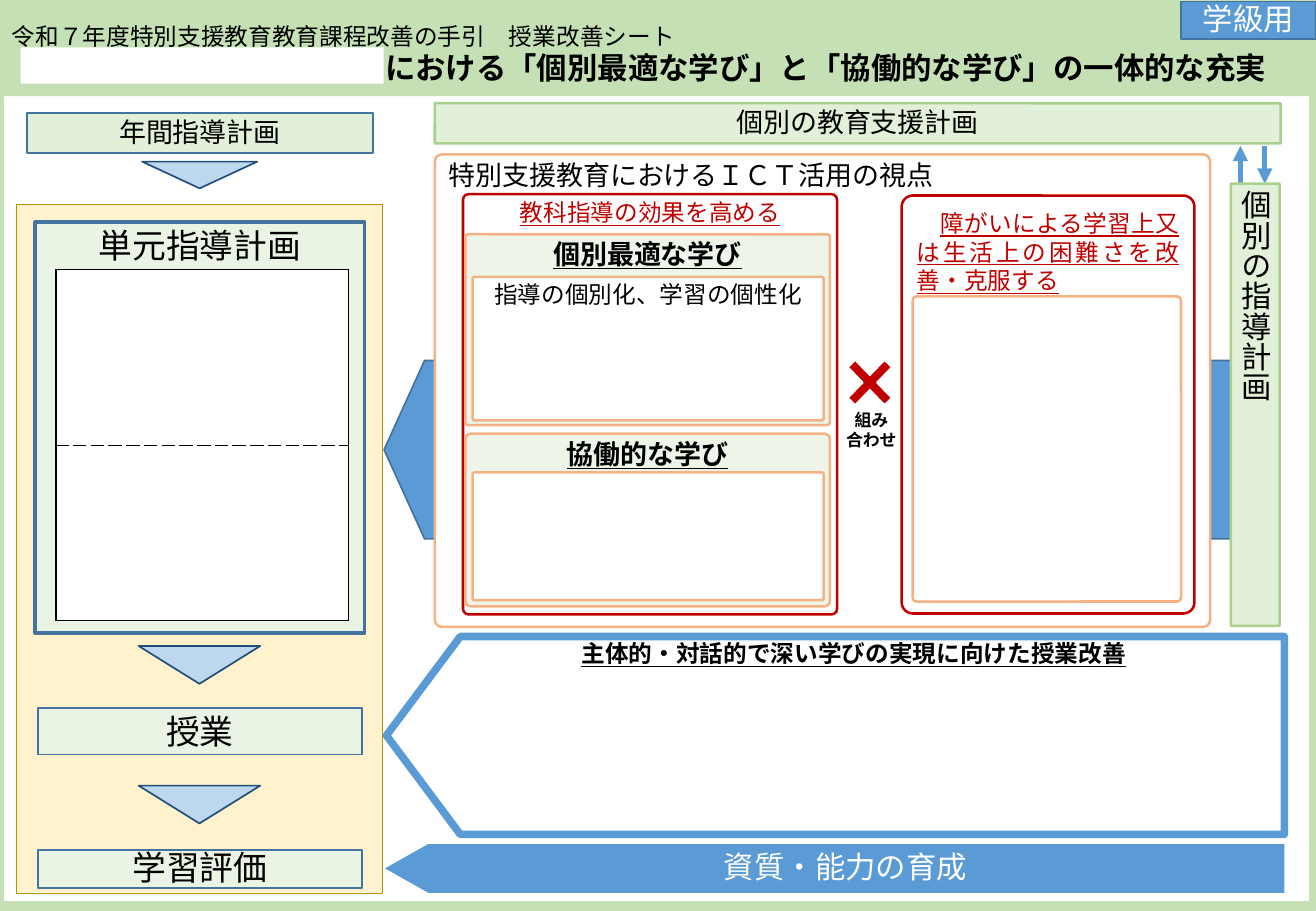
from dataclasses import dataclass
from typing import NamedTuple, Optional

from lxml import etree
from pptx import Presentation
from pptx.dml.color import RGBColor
from pptx.enum.shapes import MSO_CONNECTOR, MSO_SHAPE
from pptx.enum.text import MSO_ANCHOR, MSO_AUTO_SIZE, PP_ALIGN
from pptx.oxml.ns import qn
from pptx.util import Cm, Pt

RECT, ROUND = MSO_SHAPE.RECTANGLE, MSO_SHAPE.ROUNDED_RECTANGLE
DOWN, LEFT_ARROW = MSO_SHAPE.DOWN_ARROW, MSO_SHAPE.LEFT_ARROW
PENTAGON, TIMES = MSO_SHAPE.PENTAGON, MSO_SHAPE.MATH_MULTIPLY
STRAIGHT = MSO_CONNECTOR.STRAIGHT
TOP, MIDDLE = MSO_ANCHOR.TOP, MSO_ANCHOR.MIDDLE
LEFT, CENTER, JUSTIFY = PP_ALIGN.LEFT, PP_ALIGN.CENTER, PP_ALIGN.JUSTIFY
NO_FIT = MSO_AUTO_SIZE.NONE


@dataclass(frozen=True)
class Theme:
    font: str = "Noto Sans CJK JP"
    black: str = "000000"
    white: str = "FFFFFF"
    blue: str = "5B9BD5"
    steel: str = "43739E"
    navy: str = "1F4E79"
    sky: str = "BDD7EE"
    red: str = "C00000"
    orange: str = "F4B183"
    gold: str = "BF9000"
    cream: str = "FFF2CC"
    band: str = "C5E0B4"
    leaf: str = "A9D18E"
    pale: str = "E2F0D9"
    mint: str = "EAF4E4"
    mist: str = "ECF5E7"
    tiny: int = 10
    small: int = 14
    medium: int = 16
    large: int = 18
    huge: int = 20


T = Theme()


class Look(NamedTuple):
    fill: Optional[str]
    line: Optional[str] = None
    width: float = 1


STEP = Look(T.mint, T.steel)
MARKER = Look(T.sky, T.navy)
WHITE_CARD = Look(T.white, T.orange, 1.5)
TINTED_CARD = Look(T.mist, T.orange, 1.5)
RED_CARD = Look(T.white, T.red, 1.5)
SUPPORT_PLAN = Look(T.pale, T.leaf, 1.5)


@dataclass(frozen=True)
class Label:
    lines: tuple[str, ...]
    size: int
    color: str = T.black
    bold: bool = False
    underline: bool = False
    align: PP_ALIGN = CENTER
    anchor: MSO_ANCHOR = TOP
    top: float = 0.05
    spacing: Optional[int] = None
    first_indent: float = 0
    vertical: bool = False


@dataclass(frozen=True)
class Box:
    at: tuple[float, float, float, float]
    look: Look
    shape: MSO_SHAPE = RECT
    adj: tuple[float, ...] = ()
    label: Optional[Label] = None
    flip: bool = False


class Arrow(NamedTuple):
    x: float
    y1: float
    y2: float


def heading(text: str, size: int, **options) -> Label:
    return Label((text,), size, **options)


SOFT = (0.015,)
FULL_HEAD = (0.5, 1)

ARROWS = [Arrow(26.44, 3.05, 3.84), Arrow(25.93, 3.84, 3.05)]

BOXES = [
    Box((0.33, 4.27, 7.67, 14.4), Look(T.cream, T.gold, 0.25)),
    Box((2.9, 16.43, 2.54, 0.79), MARKER, DOWN, FULL_HEAD),
    Box((0.79, 14.81, 6.78, 0.97), STEP, label=heading("授業", T.huge)),
    Box((0.79, 17.78, 6.78, 0.79), STEP, label=heading("学習評価", T.huge, anchor=MIDDLE)),
    Box((0.74, 4.65, 6.88, 8.59), Look(T.mint, T.steel, 2.25),
        label=heading("単元指導計画", T.huge)),
    Box((2.9, 13.51, 2.54, 0.79), MARKER, DOWN, FULL_HEAD),
    Box((8.08, 13.31, 18.77, 4.14), Look(T.white, T.blue, 4.5), PENTAGON, (0.373,), flip=True,
        label=heading("主体的・対話的で深い学びの実現に向けた授業改善", T.small,
                      bold=True, underline=True)),
    Box((8.05, 17.65, 18.8, 1.02), Look(T.blue), PENTAGON, (0.887,), flip=True,
        label=heading("資質・能力の育成", T.large, color=T.white, anchor=MIDDLE)),
    Box((8.03, 7.54, 18.72, 3.73), Look(T.blue, T.steel), LEFT_ARROW, (1, 0.227)),
    Box((9.09, 3.23, 16.21, 9.88), WHITE_CARD, ROUND, SOFT,
        heading("特別支援教育におけるＩＣＴ活用の視点", T.medium, align=JUSTIFY)),
    Box((9.68, 4.06, 7.82, 8.79), RED_CARD, ROUND, SOFT,
        heading("教科指導の効果を高める", T.small, color=T.red, underline=True)),
    Box((18.85, 4.09, 6.12, 8.74), RED_CARD, ROUND, (0.038,),
        heading("障がいによる学習上又は生活上の困難さを改善・克服する", T.small, color=T.red,
                underline=True, align=JUSTIFY, top=0.2, spacing=17, first_indent=0.49)),
    Box((9.73, 4.9, 7.62, 3.99), TINTED_CARD, ROUND, SOFT,
        heading("個別最適な学び", T.medium, bold=True, underline=True)),
    Box((17.45, 7.24, 1.47, 1.52), Look(T.red, T.white), TIMES, (0.144,)),
    Box((9.88, 5.79, 7.34, 3), WHITE_CARD, ROUND, SOFT,
        heading("指導の個別化、学習の個性化", T.small)),
    Box((9.73, 9.07, 7.62, 3.61), TINTED_CARD, ROUND, (0.03,),
        heading("協働的な学び", T.medium, bold=True, underline=True)),
    Box((9.88, 9.88, 7.34, 2.67), WHITE_CARD, ROUND, SOFT),
    Box((25.73, 3.84, 1.02, 9.25), SUPPORT_PLAN, ROUND, SOFT,
        heading("個別の指導計画", T.large, align=LEFT, anchor=MIDDLE, top=0.13, vertical=True)),
    Box((2.97, 3.38, 2.41, 0.56), MARKER, DOWN, FULL_HEAD),
    Box((0.56, 2.36, 7.24, 0.84), Look(T.pale, T.steel), label=heading("年間指導計画", T.medium)),
    Box((-0.03, 0.05, 27.51, 18.9), Look(None, T.band, 6)),
    Box((19.08, 6.2, 5.61, 6.38), WHITE_CARD, ROUND, SOFT),
    Box((0.43, 0.99, 7.59, 0.76), Look(T.white)),
    Box((24.69, 0.03, 2.82, 0.79), Look(T.blue, T.steel),
        label=heading("学級用", T.large, color=T.white, anchor=MIDDLE)),
    Box((9.09, 2.16, 17.68, 0.84), SUPPORT_PLAN, ROUND, SOFT,
        heading("個別の教育支援計画", T.medium, anchor=MIDDLE)),
]
COMBINE_AT = (17.35, 8.43, 1.73, 1.12)
COMBINE = Label(("組み", "合わせ"), T.tiny, bold=True, top=0.13, spacing=12)


def lengths(values: tuple[float, ...]) -> list[Cm]:
    return [Cm(v) for v in values]


def set_frame(tf, anchor: MSO_ANCHOR, top: float, bottom: float = 0.13) -> None:
    values = dict(word_wrap=True, auto_size=NO_FIT, vertical_anchor=anchor, margin_left=Cm(0.25),
                  margin_right=Cm(0.25), margin_top=Cm(top), margin_bottom=Cm(bottom))
    for name, value in values.items():
        setattr(tf, name, value)


def write_line(p, text: str, label: Label) -> None:
    p.alignment = label.align
    if label.spacing:
        p.line_spacing = Pt(label.spacing)
    if label.first_indent:
        p._p.get_or_add_pPr().set("indent", str(Cm(label.first_indent)))
    r = p.add_run()
    r.text = text
    values = dict(name=T.font, size=Pt(label.size), bold=label.bold, underline=label.underline)
    for name, value in values.items():
        setattr(r.font, name, value)
    r.font.color.rgb = RGBColor.from_string(label.color)
    etree.SubElement(r._r.get_or_add_rPr(), qn("a:ea")).set("typeface", T.font)


def write_label(tf, label: Label) -> None:
    set_frame(tf, label.anchor, label.top)
    if label.vertical:
        tf._txBody.bodyPr.set("vert", "eaVert")
    for i, text in enumerate(label.lines):
        write_line(tf.add_paragraph() if i else tf.paragraphs[0], text, label)


def paint(sp, look: Look) -> None:
    if look.fill:
        sp.fill.solid()
        sp.fill.fore_color.rgb = RGBColor.from_string(look.fill)
    else:
        sp.fill.background()
    if look.line:
        sp.line.color.rgb = RGBColor.from_string(look.line)
        sp.line.width = Pt(look.width)
    else:
        sp.line.fill.background()


def draw_box(shapes, box: Box) -> None:
    sp = shapes.add_shape(box.shape, *lengths(box.at))
    sp.shadow.inherit = False
    paint(sp, box.look)
    for i, value in enumerate(box.adj):
        sp.adjustments[i] = value
    if box.flip:
        sp._element.spPr.find(qn("a:xfrm")).set("flipH", "1")
    if box.label:
        write_label(sp.text_frame, box.label)


def draw_arrow(shapes, arrow: Arrow) -> None:
    line = shapes.add_connector(STRAIGHT, *lengths((arrow.x, arrow.y1, arrow.x, arrow.y2)))
    line.line.color.rgb = RGBColor.from_string(T.blue)
    line.line.width = Pt(3)
    etree.SubElement(line.line._get_or_add_ln(), qn("a:tailEnd")).set("type", "triangle")
    etree.SubElement(line._element.spPr, qn("a:effectLst"))


def draw_title(title) -> None:
    title.left, title.top, title.width, title.height = lengths((0, 0.05, 27.51, 1.96))
    paint(title, Look(T.band))
    tf = title.text_frame
    set_frame(tf, MIDDLE, 0.13, 0)
    write_line(tf.paragraphs[0], "令和７年度特別支援教育教育課程改善の手引　授業改善シート",
               Label((), T.small, align=LEFT, spacing=18))
    p = tf.add_paragraph()
    p._p.get_or_add_pPr().set("marL", str(Cm(7.8)))
    p.space_before = Pt(0)
    write_line(p, "における「個別最適な学び」と「協働的な学び」の一体的な充実",
               Label((), T.large, bold=True, align=LEFT, spacing=21))


def draw_unit_table(shapes) -> None:
    """Two blank cells parted by a dashed rule."""
    table = shapes.add_table(2, 1, *lengths((1.17, 5.64, 6.12, 7.34))).table
    table.first_row = table.horz_banding = False
    for cell, dashed in zip(table.iter_cells(), ("lnB", "lnT")):
        tcPr = cell._tc.get_or_add_tcPr()
        for side in ("lnL", "lnR", "lnT", "lnB"):
            ln = etree.SubElement(tcPr, qn(f"a:{side}"), w=str(Pt(1)))
            fill = etree.SubElement(ln, qn("a:solidFill"))
            etree.SubElement(fill, qn("a:srgbClr"), val=T.black)
            etree.SubElement(ln, qn("a:prstDash"), val="sysDash" if side == dashed else "solid")
        cell.fill.solid()
        cell.fill.fore_color.rgb = RGBColor.from_string(T.white)


def main() -> None:
    prs = Presentation()
    prs.slide_width, prs.slide_height = lengths((27.51, 19.05))
    s = prs.slides.add_slide(prs.slide_layouts[5])
    draw_title(s.shapes.title)
    for arrow in ARROWS:
        draw_arrow(s.shapes, arrow)
    for box in BOXES:
        draw_box(s.shapes, box)
    write_label(s.shapes.add_textbox(*lengths(COMBINE_AT)).text_frame, COMBINE)
    draw_unit_table(s.shapes)
    prs.save("out.pptx")


if __name__ == "__main__":
    main()
